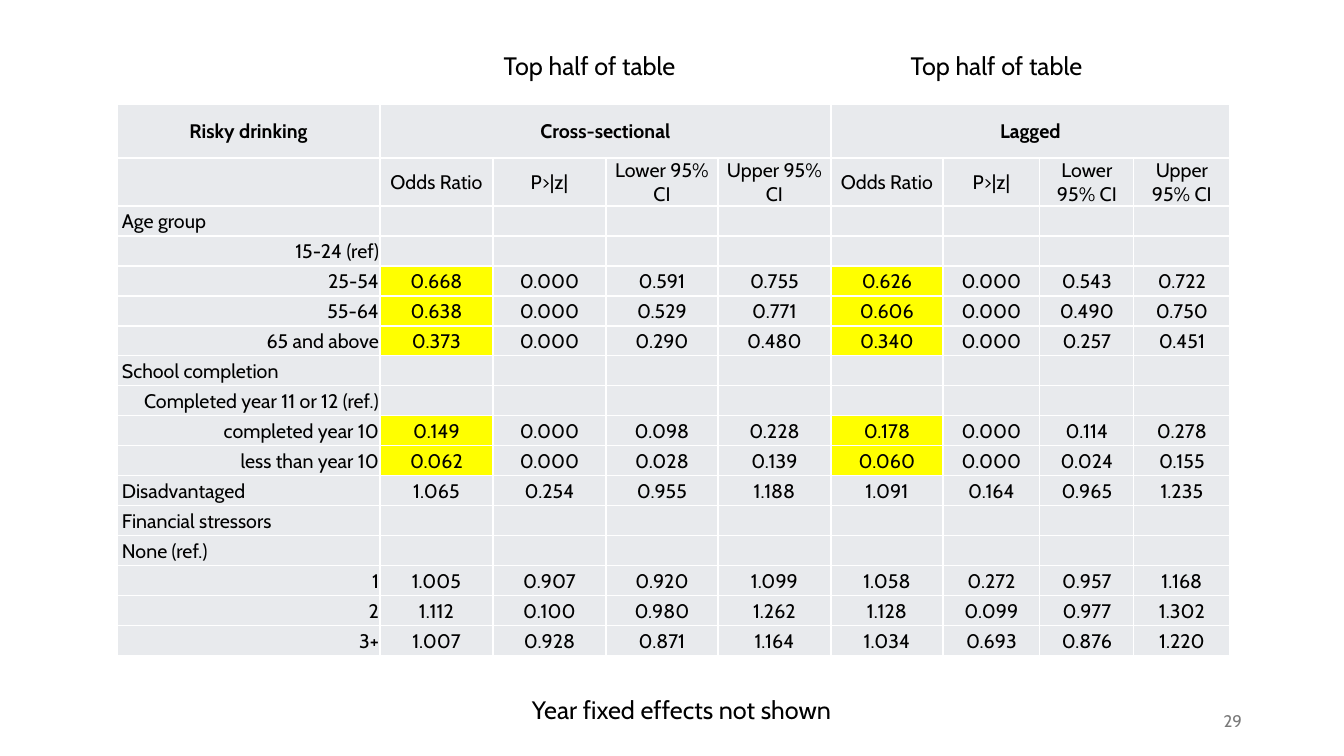
from itertools import accumulate

from lxml import etree
from pptx import Presentation
from pptx.dml.color import RGBColor
from pptx.enum.text import MSO_ANCHOR, PP_ALIGN
from pptx.oxml.ns import qn
from pptx.util import Pt

LEFT, CENTER, RIGHT = PP_ALIGN.LEFT, PP_ALIGN.CENTER, PP_ALIGN.RIGHT
TOP, MIDDLE = MSO_ANCHOR.TOP, MSO_ANCHOR.MIDDLE

BLACK = RGBColor(0x00, 0x00, 0x00)
NUMBER_GREY = RGBColor(0x79, 0x79, 0x79)
CELL_GREY = RGBColor(0xE8, 0xEA, 0xED)
HIGHLIGHT = RGBColor(0xFF, 0xFF, 0x00)
WHITE = RGBColor(0xFF, 0xFF, 0xFF)

FONT = "Cabin"
PX = 914400 / 100.8

COLUMN_WIDTHS = [263, 113, 113, 112, 113, 112, 97, 94, 96]
HEADER_HEIGHTS = [54, 48]
ROW_HEIGHT = 30
RATIO_COLUMNS = (1, 5)

MEASURES = ["Odds Ratio", "P>|z|", "Lower 95% CI", "Upper 95% CI"]
RESULTS = [
    ("Age group", LEFT, "", False),
    ("15-24 (ref)", RIGHT, "", False),
    ("25-54", RIGHT, "0.668 0.000 0.591 0.755 0.626 0.000 0.543 0.722", True),
    ("55-64", RIGHT, "0.638 0.000 0.529 0.771 0.606 0.000 0.490 0.750", True),
    ("65 and above", RIGHT, "0.373 0.000 0.290 0.480 0.340 0.000 0.257 0.451", True),
    ("School completion", LEFT, "", False),
    ("Completed year 11 or 12 (ref.)", RIGHT, "", False),
    ("completed year 10", RIGHT, "0.149 0.000 0.098 0.228 0.178 0.000 0.114 0.278", True),
    ("less than year 10", RIGHT, "0.062 0.000 0.028 0.139 0.060 0.000 0.024 0.155", True),
    ("Disadvantaged", LEFT, "1.065 0.254 0.955 1.188 1.091 0.164 0.965 1.235", False),
    ("Financial stressors", LEFT, "", False),
    ("None (ref.)", LEFT, "", False),
    ("1", RIGHT, "1.005 0.907 0.920 1.099 1.058 0.272 0.957 1.168", False),
    ("2", RIGHT, "1.112 0.100 0.980 1.262 1.128 0.099 0.977 1.302", False),
    ("3+", RIGHT, "1.007 0.928 0.871 1.164 1.034 0.693 0.876 1.220", False),
]


def px(length):
    return round(length * PX)


def style_paragraph(para, size, color, align, bold=False):
    para.alignment = align
    para.font.name = FONT
    para.font.size = Pt(size)
    para.font.bold = bold
    para.font.color.rgb = color


def add_label(page, box, text, size=18, color=BLACK, align=CENTER, anchor=TOP):
    frame = page.shapes.add_textbox(*map(px, box)).text_frame
    frame.word_wrap = True
    frame.vertical_anchor = anchor
    para = frame.paragraphs[0]
    para.text = text
    style_paragraph(para, size, color, align)


def add_borders(cell):
    properties = cell._tc.get_or_add_tcPr()
    for position, side in enumerate(("a:lnL", "a:lnR", "a:lnT", "a:lnB")):
        line = etree.Element(qn(side), w=str(Pt(1)))
        fill = etree.SubElement(line, qn("a:solidFill"))
        etree.SubElement(fill, qn("a:srgbClr"), val=str(WHITE))
        properties.insert(position, line)


def fill_cell(cell, text="", align=CENTER, fill=CELL_GREY, bold=False):
    cell.fill.solid()
    cell.fill.fore_color.rgb = fill
    cell.vertical_anchor = MIDDLE
    cell.margin_left = px(5 if align == LEFT else 1)
    cell.margin_right = cell.margin_top = px(1)
    cell.margin_bottom = 0
    para = cell.text_frame.paragraphs[0]
    if text:
        para.text = text
    else:
        etree.SubElement(para._p, qn("a:endParaRPr"), sz="1400")
    style_paragraph(para, 14, BLACK, align, bold)
    add_borders(cell)


def add_results_table(page, left, top):
    heights = HEADER_HEIGHTS + [ROW_HEIGHT] * len(RESULTS)
    box = map(px, (left, top, sum(COLUMN_WIDTHS), sum(heights)))
    table = page.shapes.add_table(len(heights), len(COLUMN_WIDTHS), *box).table
    table.first_row = table.horz_banding = False
    edges = [0, *accumulate(COLUMN_WIDTHS)]
    for column, start, end in zip(table.columns, edges, edges[1:]):
        column.width = px(end) - px(start)
    for row, height in zip(table.rows, heights):
        row.height = px(height)

    headings = ["Risky drinking", "Cross-sectional", "", "", "", "Lagged", "", "", ""]
    for index, heading in enumerate(headings):
        fill_cell(table.cell(0, index), heading, bold=True)
    for start in RATIO_COLUMNS:
        table.cell(0, start).merge(table.cell(0, start + len(MEASURES) - 1))
    for index, measure in enumerate([""] + MEASURES * 2):
        fill_cell(table.cell(1, index), measure)

    for row, (label, align, numbers, significant) in enumerate(RESULTS, len(HEADER_HEIGHTS)):
        fill_cell(table.cell(row, 0), label, align)
        values = numbers.split() or [""] * (len(COLUMN_WIDTHS) - 1)
        for index, value in enumerate(values, 1):
            marked = significant and index in RATIO_COLUMNS
            fill_cell(table.cell(row, index), value, fill=HIGHLIGHT if marked else CELL_GREY)


def build_results_page(deck):
    page = deck.slides.add_slide(deck.slide_layouts[6])
    add_label(page, (175, 689, 1013, 40), "Year fixed effects not shown")
    add_label(page, (950, 701, 302, 40), "29", 12, NUMBER_GREY, RIGHT, MIDDLE)
    for left in (421, 828):
        add_label(page, (left, 45, 337, 40), "Top half of table")
    add_results_table(page, 117, 104)


def main():
    deck = Presentation()
    deck.slide_width, deck.slide_height = px(1344), px(756)
    build_results_page(deck)
    deck.save("out.pptx")


if __name__ == "__main__":
    main()
